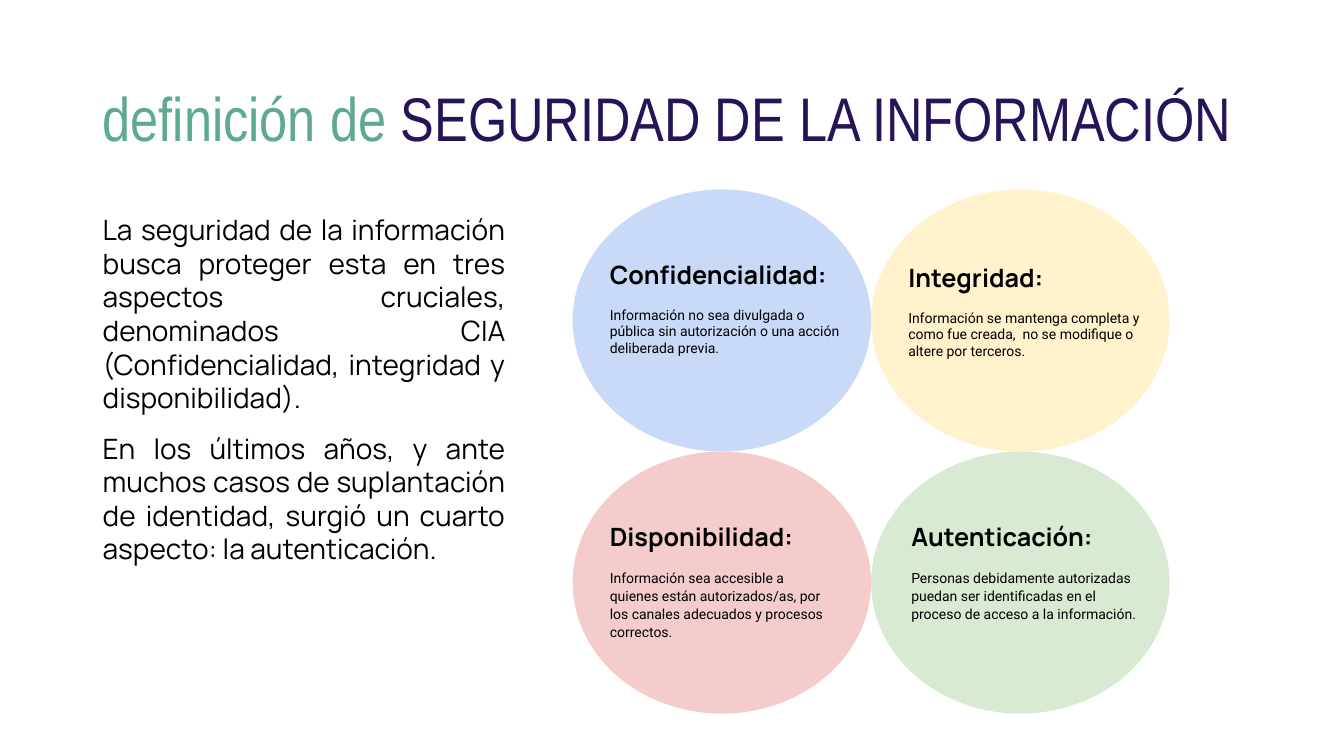
import pptx
import pptx.util
import pptx.dml.color
import pptx.enum.shapes
import pptx.enum.text

Inches = pptx.util.Inches
Pt = pptx.util.Pt
Align = pptx.enum.text.PP_ALIGN
Anchor = pptx.enum.text.MSO_ANCHOR

COLORS = {
    "green": "5EAA8F",
    "navy": "271357",
    "black": "000000",
    "blue": "C9DAF8",
    "yellow": "FFF2CC",
    "red": "F4CCCC",
    "mint": "D9EAD3",
}

TITLE = [("definición de ", "green"), ("SEGURIDAD DE LA INFORMACIÓN", "navy")]

BODY = [
    "La seguridad de la información busca proteger esta en tres aspectos cruciales, denominados CIA (Confidencialidad, integridad y disponibilidad).",
    "En los últimos años, y ante muchos casos de suplantación de identidad, surgió un cuarto aspecto: la autenticación.",
]

ASPECTS = [
    ("Confidencialidad:",
     "Información no sea divulgada o pública sin autorización o una acción deliberada previa.",
     "blue", (5.95, 2.52, 2.5, 1.32), None),
    ("Integridad:",
     "Información se mantenga completa y como fue creada,  no se modifique o altere por terceros.",
     "yellow", (8.91, 2.55, 2.55, 1.32), None),
    ("Disponibilidad:",
     "Información sea accesible a quienes están autorizados/as, por los canales adecuados y procesos correctos.",
     "red", (5.95, 5.12, 2.43, 1.32), 1.08),
    ("Autenticación:",
     "Personas debidamente autorizadas puedan ser identificadas en el proceso de acceso a la información.",
     "mint", (8.94, 5.12, 2.43, 1.32), 1.08),
]

LEFT, TOP, WIDE, HIGH = 5.68, 1.88, 2.96, 2.6


def color(name):
    return pptx.dml.color.RGBColor.from_string(COLORS[name])


def add_text(slide, box, paras, anchor=Anchor.TOP):
    frame = slide.shapes.add_textbox(*map(Inches, box)).text_frame
    frame.word_wrap = True
    frame.vertical_anchor = anchor
    for i, (runs, align, space) in enumerate(paras):
        para = frame.add_paragraph() if i else frame.paragraphs[0]
        para.alignment = align
        if i:
            para.space_before = Pt(12)
        if space:
            para.line_spacing = space
        for text, font, size, bold, tint in runs:
            run = para.add_run()
            run.text = text
            run.font.name = font
            run.font.size = Pt(size)
            run.font.bold = bold
            run.font.color.rgb = color(tint)


def add_oval(slide, spot, tint):
    row, col = divmod(spot, 2)
    box = (LEFT + col * WIDE, TOP + row * HIGH, WIDE, HIGH)
    oval = slide.shapes.add_shape(
        pptx.enum.shapes.MSO_SHAPE.OVAL, *map(Inches, box))
    oval.shadow.inherit = False
    oval.fill.solid()
    oval.fill.fore_color.rgb = color(tint)
    oval.line.fill.background()


def main():
    deck = pptx.Presentation()
    deck.slide_width = Inches(13.33)
    deck.slide_height = Inches(7.5)
    slide = deck.slides.add_slide(deck.slide_layouts[6])

    title = [(text, "Arial Narrow", 44, False, tint) for text, tint in TITLE]
    add_text(slide, (0.92, 0.48, 11.5, 1.45),
             [(title, Align.LEFT, 0.9)], Anchor.MIDDLE)
    add_text(slide, (0.92, 2.06, 4.19, 4.69),
             [([(text, "Manrope", 20, False, "black")], Align.JUSTIFY, None)
              for text in BODY])

    for spot, aspect in enumerate(ASPECTS):
        add_oval(slide, spot, aspect[2])
    for head, text, tint, box, space in ASPECTS:
        add_text(slide, box, [
            ([(head, "Manrope", 18, True, "black")], Align.LEFT, None),
            ([(text, "Roboto", 10, False, "black")], Align.LEFT, space),
        ])

    deck.save("out.pptx")


if __name__ == "__main__":
    main()
